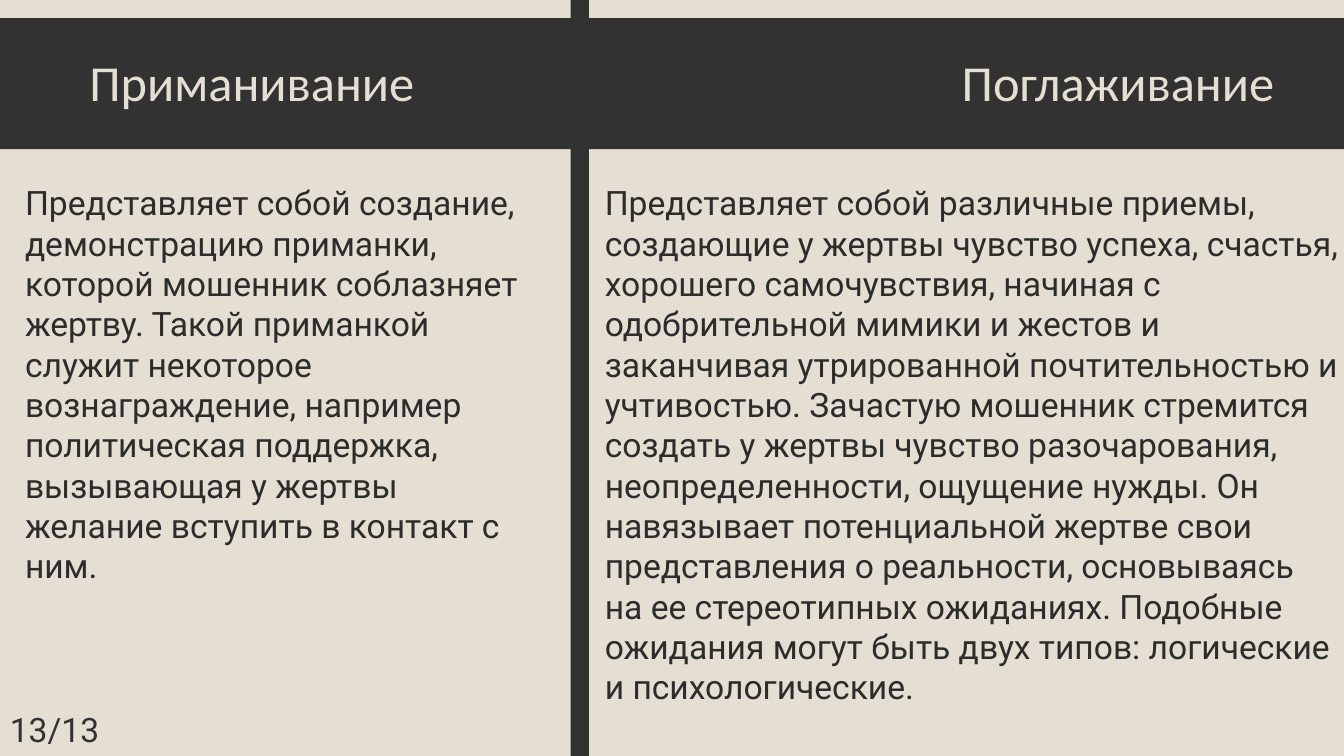
from pptx import Presentation
from pptx.dml.color import RGBColor
from pptx.enum.shapes import MSO_SHAPE
from pptx.enum.text import MSO_AUTO_SIZE, PP_ALIGN
from pptx.util import Inches, Pt

COLORS = {"sand": "E4DFD2", "charcoal": "323232", "text": "2C2C2C"}

presentation = Presentation()
presentation.slide_width = Inches(13.33)
presentation.slide_height = Inches(7.5)
slide = presentation.slides.add_slide(presentation.slide_layouts[6])
slide.background.fill.solid()
slide.background.fill.fore_color.rgb = RGBColor.from_string(COLORS["sand"])


def add_bar(left, top, width, height):
    bar = slide.shapes.add_shape(
        MSO_SHAPE.RECTANGLE, Inches(left), Inches(top), Inches(width), Inches(height))
    bar.shadow.inherit = False
    bar.fill.solid()
    bar.fill.fore_color.rgb = RGBColor.from_string(COLORS["charcoal"])
    bar.line.fill.background()
    return bar


def add_text(text, box, font, size, color, align=PP_ALIGN.LEFT, wrap=False):
    frame = slide.shapes.add_textbox(*[Inches(length) for length in box]).text_frame
    frame.word_wrap = wrap
    frame.auto_size = MSO_AUTO_SIZE.SHAPE_TO_FIT_TEXT
    paragraph = frame.paragraphs[0]
    paragraph.text = text
    paragraph.alignment = align
    paragraph.font.name = font
    paragraph.font.size = Pt(size)
    paragraph.font.color.rgb = RGBColor.from_string(COLORS[color])


# Header band and column divider
add_bar(0, 0.18, 13.33, 1.3)
divider = add_bar(1.97, 3.69, 7.56, 0.18)
divider.rotation = 90

# Two columns: heading, heading box, body, body box
columns = [
    ("Приманивание ", (0.77, 0.46, 3.57, 0.71),
     "Представляет собой создание, демонстрацию приманки, которой мошенник "
     "соблазняет жертву. Такой приманкой служит некоторое вознаграждение, "
     "например политическая поддержка, вызывающая у жертвы желание вступить "
     "в контакт с ним.", (0.15, 1.76, 5.17, 4.14)),
    ("Поглаживание ", (9.42, 0.46, 3.45, 0.71),
     "Представляет собой различные приемы, создающие у жертвы чувство успеха, "
     "счастья, хорошего самочувствия, начиная с одобрительной мимики и жестов "
     "и заканчивая утрированной почтительностью и учтивостью. Зачастую мошенник "
     "стремится создать у жертвы чувство разочарования, неопределенности, "
     "ощущение нужды. Он навязывает потенциальной жертве свои представления "
     "о реальности, основываясь на ее стереотипных ожиданиях. Подобные ожидания "
     "могут быть двух типов: логические и психологические.",
     (5.9, 1.76, 7.48, 5.35)),
]
for heading, heading_box, body, body_box in columns:
    add_text(heading, heading_box, "Calibri", 36, "sand", align=PP_ALIGN.CENTER)
    add_text(body, body_box, "Roboto", 24, "text", wrap=True)

# Page counter
add_text("13/13", (0, 6.98, 1.1, 0.5), "Roboto", 24, "charcoal")

presentation.save("out.pptx")
